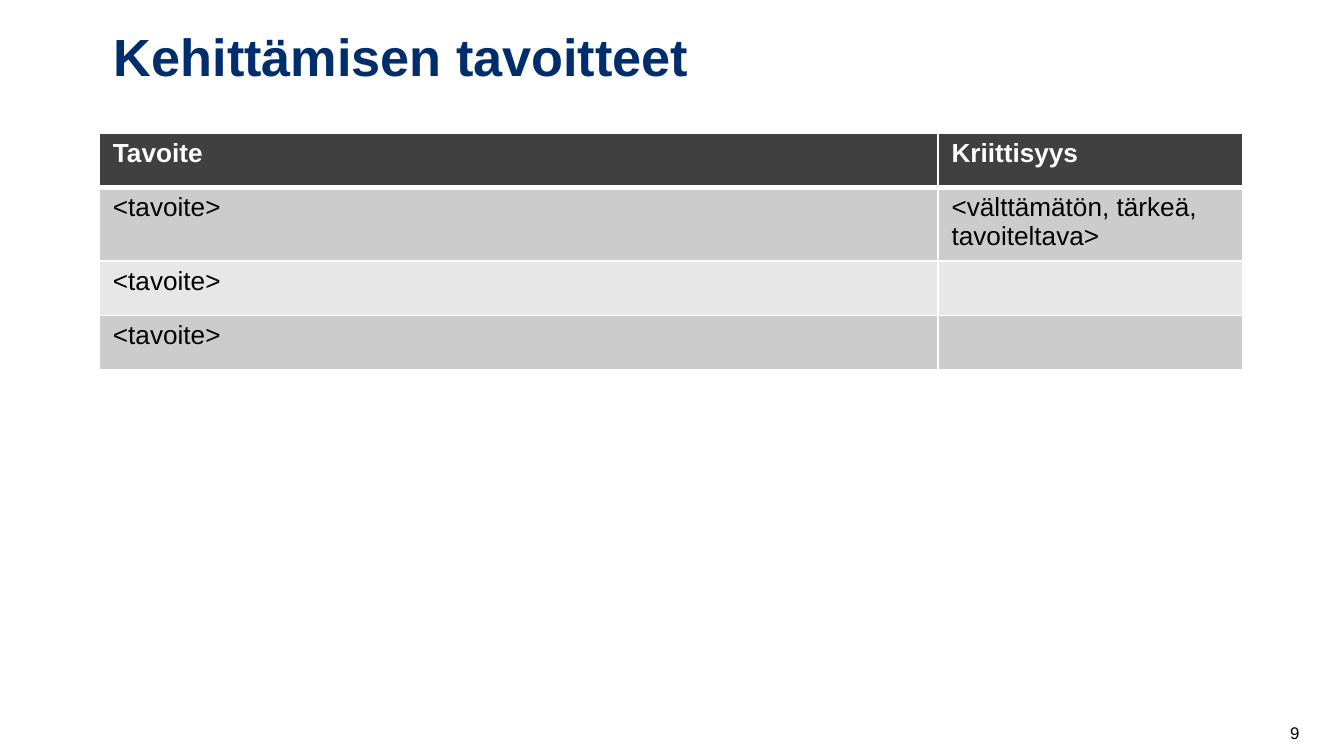
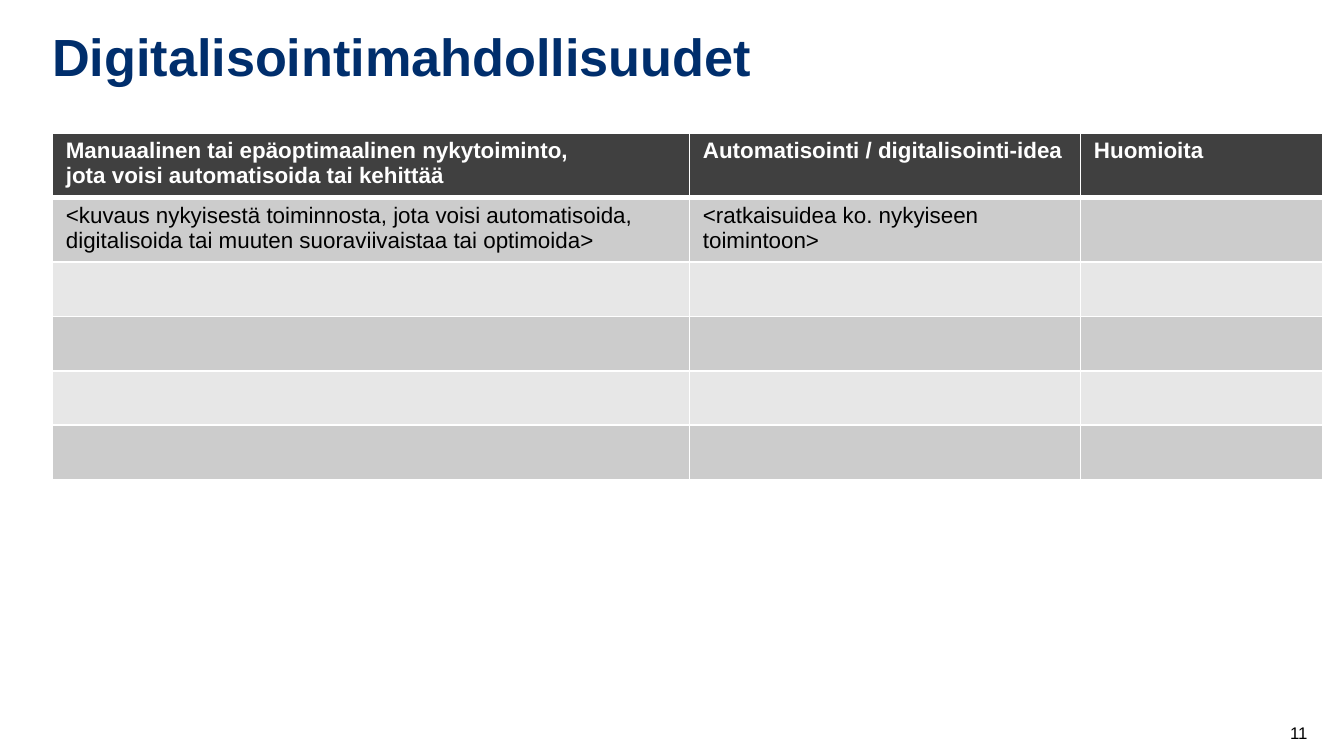
import pptx
import pptx.dml.color
import pptx.enum.text
import pptx.oxml.ns
import pptx.util
from lxml import etree

Inches = pptx.util.Inches
Pt = pptx.util.Pt
Anchor = pptx.enum.text.MSO_ANCHOR

FONT = "Arial"
NAVY, BLACK, WHITE = "002E6C", "000000", "FFFFFF"
HEAD, BANDS = "404040", ("CCCCCC", "E7E7E7")
ROW = 0.81 / 2

GOALS = [
    ["Tavoite", "Kriittisyys"],
    ["<tavoite>", "<välttämätön, tärkeä, tavoiteltava>"],
    ["<tavoite>", ""],
    ["<tavoite>", ""],
]
IDEAS = [
    ["Manuaalinen tai epäoptimaalinen nykytoiminto, \vjota voisi automatisoida tai kehittää",
     "Automatisointi / digitalisointi-idea", "Huomioita"],
    ["<kuvaus nykyisestä toiminnosta, jota voisi automatisoida, "
     "digitalisoida tai muuten suoraviivaistaa tai optimoida>",
     "<ratkaisuidea ko. nykyiseen toimintoon>", ""],
] + [[""] * 3 for _ in range(4)]


def color(code):
    return pptx.dml.color.RGBColor.from_string(code)


def write(frame, text, size=14, ink=BLACK, bold=False):
    frame.word_wrap = True
    frame.text = text
    for para in frame.paragraphs:
        for run in para.runs:
            run.font.name = FONT
            run.font.size = Pt(size)
            run.font.bold = bold
            run.font.color.rgb = color(ink)


def label(slide, text, box, anchor=Anchor.TOP, **style):
    frame = slide.shapes.add_textbox(*map(Inches, box)).text_frame
    frame.vertical_anchor = anchor
    write(frame, text, **style)


def edge(cell, side, width):
    props = cell._tc.get_or_add_tcPr()
    line = etree.Element(pptx.oxml.ns.qn("a:ln" + side), w=str(Pt(width)))
    fill = etree.SubElement(line, pptx.oxml.ns.qn("a:solidFill"))
    etree.SubElement(fill, pptx.oxml.ns.qn("a:srgbClr"), val=WHITE)
    props.append(line)


def paint(cell, row):
    for side in "LRTB":
        thick = (row, side) in ((0, "B"), (1, "T"))
        edge(cell, side, 3 if thick else 1)
    cell.margin_top = cell.margin_bottom = Inches(0.04)
    cell.fill.solid()
    cell.fill.fore_color.rgb = color(BANDS[(row - 1) % 2] if row else HEAD)


def grid(slide, rows, left, widths, size):
    box = (left, 0.99, sum(widths), ROW * len(rows))
    table = slide.shapes.add_table(len(rows), len(widths), *map(Inches, box)).table
    for col, width in zip(table.columns, widths):
        col.width = Inches(width)
    for r, texts in enumerate(rows):
        table.rows[r].height = Inches(ROW)
        for c, text in enumerate(texts):
            cell = table.cell(r, c)
            paint(cell, r)
            write(cell.text_frame, text, size=size, ink=BLACK if r else WHITE, bold=r == 0)


def page(deck, title, left, number):
    slide = deck.slides.add_slide(deck.slide_layouts[6])
    label(slide, title, (left, 0.13, 9.25 - left, 0.74), size=28, ink=NAVY, bold=True)
    label(slide, number, (9.5, 5.3, 0.45, 0.3), anchor=Anchor.MIDDLE, size=9)
    return slide


def main():
    deck = pptx.Presentation()
    deck.slide_width = Inches(10)
    deck.slide_height = deck.slide_width * 9 // 16
    goals = page(deck, "Kehittämisen tavoitteet", 0.75, "9")
    grid(goals, GOALS, 0.74, (6.24, 2.27), 14)
    ideas = page(deck, "Digitalisointimahdollisuudet", 0.29, "11")
    grid(ideas, IDEAS, 0.39, (4.74, 2.91, 1.8), 12)
    deck.save("out.pptx")


if __name__ == "__main__":
    main()
